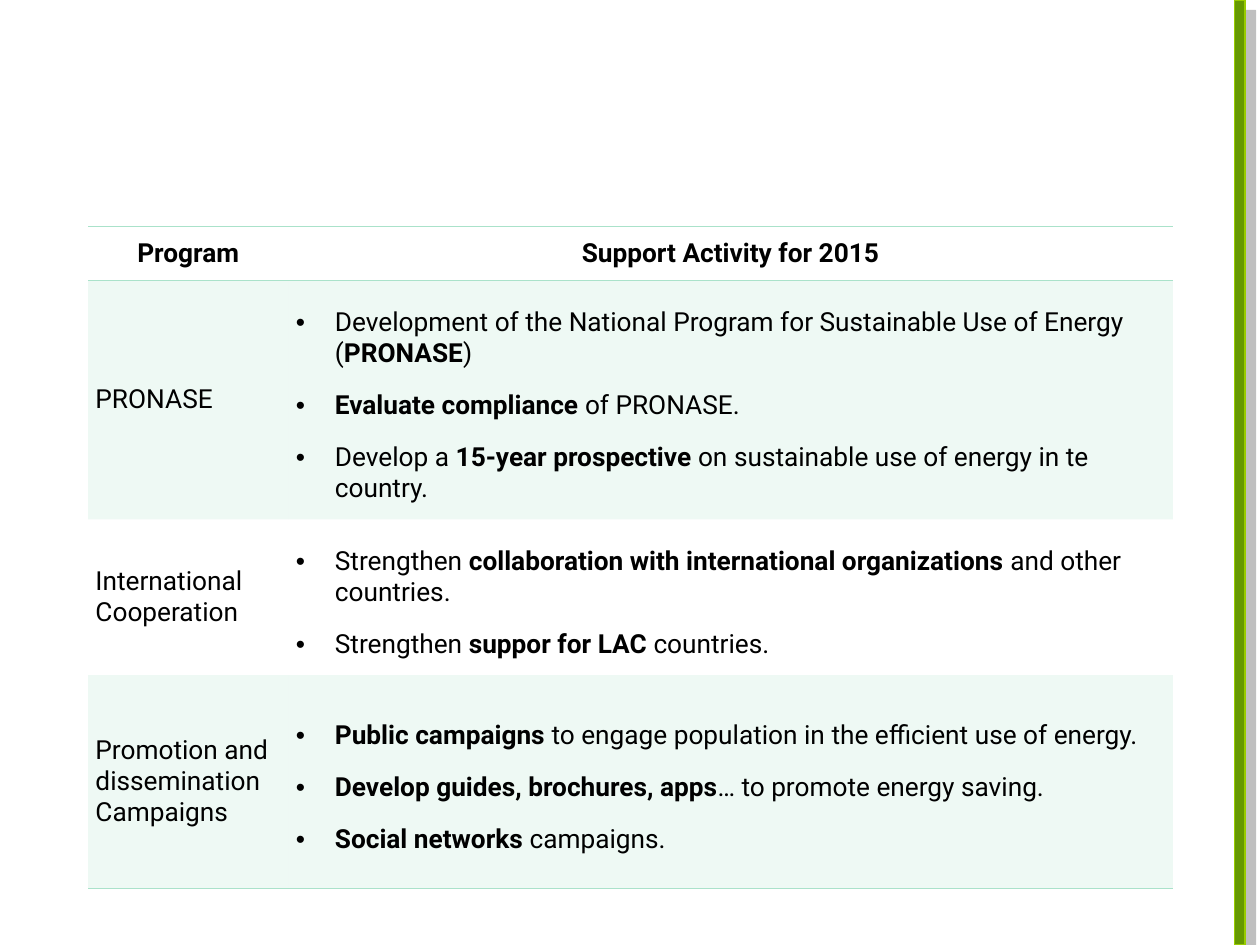
from dataclasses import dataclass

from lxml.etree import SubElement
from pptx import Presentation
from pptx.dml.color import RGBColor
from pptx.enum.shapes import MSO_SHAPE
from pptx.enum.text import MSO_ANCHOR, PP_ALIGN
from pptx.oxml.ns import qn
from pptx.util import Pt


@dataclass(frozen=True)
class Theme:
    font: str = "Roboto"
    size: float = 15
    text: str = "000000"
    mint: str = "AAE2CA"
    tint_alpha: int = 20
    bar: str = "669900"
    bar_line: str = "99CC00"
    shadow: str = "808080"


@dataclass(frozen=True)
class Program:
    name: str
    activities: tuple[str, ...]
    height: float


T = Theme()
NO_GRID_STYLE = "{2D5ABB26-0587-4C30-8999-92F81FD0307C}"
COLUMNS = (114.5, 505.5)
HEADER = ("Program", "Support Activity for 2015")
HEADER_HEIGHT = 31
INDENT = 22.3
PROGRAMS = (
    Program("PRONASE", (
        "Development of the National Program for Sustainable Use of Energy (**PRONASE**)",
        "**Evaluate compliance **of PRONASE.",
        "Develop a **15-year prospective **on sustainable use of energy in te country.",
    ), 136.5),
    Program("International Cooperation", (
        "Strengthen **collaboration with international organizations **and other countries.",
        "Strengthen **suppor for LAC **countries.",
    ), 89),
    Program("Promotion and dissemination Campaigns", (
        "**Public campaigns **to engage population in the efficient use of energy.",
        "**Develop guides, brochures, apps**… to promote energy saving.",
        "**Social networks **campaigns.",
    ), 122),
)


def rgb(color: str) -> RGBColor:
    return RGBColor.from_string(color)


def add_color(parent, color: str, alpha: int = 100) -> None:
    clr = SubElement(parent, qn("a:srgbClr"), val=color)
    if alpha < 100:
        SubElement(clr, qn("a:alpha"), val=str(alpha * 1000))


def write(cell, *lines: str, align=PP_ALIGN.LEFT, bullet: bool = False,
          top: float = 2.2, bottom: float = 2.2) -> None:
    """Fill a cell with one paragraph per line; ** switches bold on and off."""
    cell.vertical_anchor = MSO_ANCHOR.MIDDLE
    cell.margin_left = cell.margin_right = Pt(4.3)
    cell.margin_top, cell.margin_bottom = Pt(top), Pt(bottom)
    tf = cell.text_frame
    for i, line in enumerate(lines):
        p = tf.add_paragraph() if i else tf.paragraphs[0]
        p.alignment = align
        if i:
            p.space_before = Pt(12)
        if bullet:
            pPr = p._p.get_or_add_pPr()
            pPr.set("marL", str(Pt(INDENT)))
            pPr.set("indent", str(-Pt(INDENT)))
            SubElement(pPr, qn("a:buFont"), typeface="Arial")
            SubElement(pPr, qn("a:buChar"), char="•")
        for j, part in enumerate(line.split("**")):
            if part:
                r = p.add_run()
                r.text = part
                r.font.name, r.font.size = T.font, Pt(T.size)
                r.font.bold = j % 2 == 1
                r.font.color.rgb = rgb(T.text)


def decorate(cell, edges: tuple[str, ...], tinted: bool) -> None:
    """Draw the given edges (lnT, lnB), then the cell's fill."""
    tcPr = cell._tc.get_or_add_tcPr()
    for edge in edges:
        ln = SubElement(tcPr, qn(f"a:{edge}"), w=str(Pt(1)))
        add_color(SubElement(ln, qn("a:solidFill")), T.mint)
    if tinted:
        add_color(SubElement(tcPr, qn("a:solidFill")), T.mint, T.tint_alpha)
    else:
        cell.fill.background()


def add_side_bar(s) -> None:
    sp = s.shapes.add_shape(MSO_SHAPE.RECTANGLE, Pt(705.6), 0, Pt(5.8), Pt(540))
    sp.shadow.inherit = False
    sp.fill.solid()
    sp.fill.fore_color.rgb = rgb(T.bar)
    sp.line.color.rgb = rgb(T.bar_line)
    sp.line.width = Pt(0.75)
    effects = sp._element.spPr.find(qn("a:effectLst"))
    shadow = SubElement(effects, qn("a:outerShdw"), dist=str(Pt(8.5)),
                        dir=str(45 * 60000), algn="ctr", rotWithShape="0")
    add_color(shadow, T.shadow, 50)


def add_program_table(s) -> None:
    heights = (HEADER_HEIGHT, *(program.height for program in PROGRAMS))
    table = s.shapes.add_table(len(heights), len(COLUMNS), Pt(50.3), Pt(129.3),
                               Pt(sum(COLUMNS)), Pt(sum(heights))).table
    table.horz_banding = False
    table._tbl.tblPr.find(qn("a:tableStyleId")).text = NO_GRID_STYLE
    for column, width in zip(table.columns, COLUMNS):
        column.width = Pt(width)
    for row, height in zip(table.rows, heights):
        row.height = Pt(height)

    for col, title in enumerate(HEADER):
        write(table.cell(0, col), f"**{title}**", align=PP_ALIGN.CENTER)
        decorate(table.cell(0, col), ("lnT", "lnB"), tinted=False)
    for row, program in enumerate(PROGRAMS, start=1):
        name, activities = table.cell(row, 0), table.cell(row, 1)
        write(name, program.name)
        write(activities, *program.activities, bullet=True, top=14.6, bottom=8.2)
        edges = ("lnB",) if row == len(PROGRAMS) else ()
        for cell in (name, activities):
            decorate(cell, edges, tinted=row % 2 == 1)


def main() -> None:
    prs = Presentation()
    prs.slide_width, prs.slide_height = Pt(720), Pt(540)
    s = prs.slides.add_slide(prs.slide_layouts[6])
    add_side_bar(s)
    add_program_table(s)
    prs.save("out.pptx")


if __name__ == "__main__":
    main()
